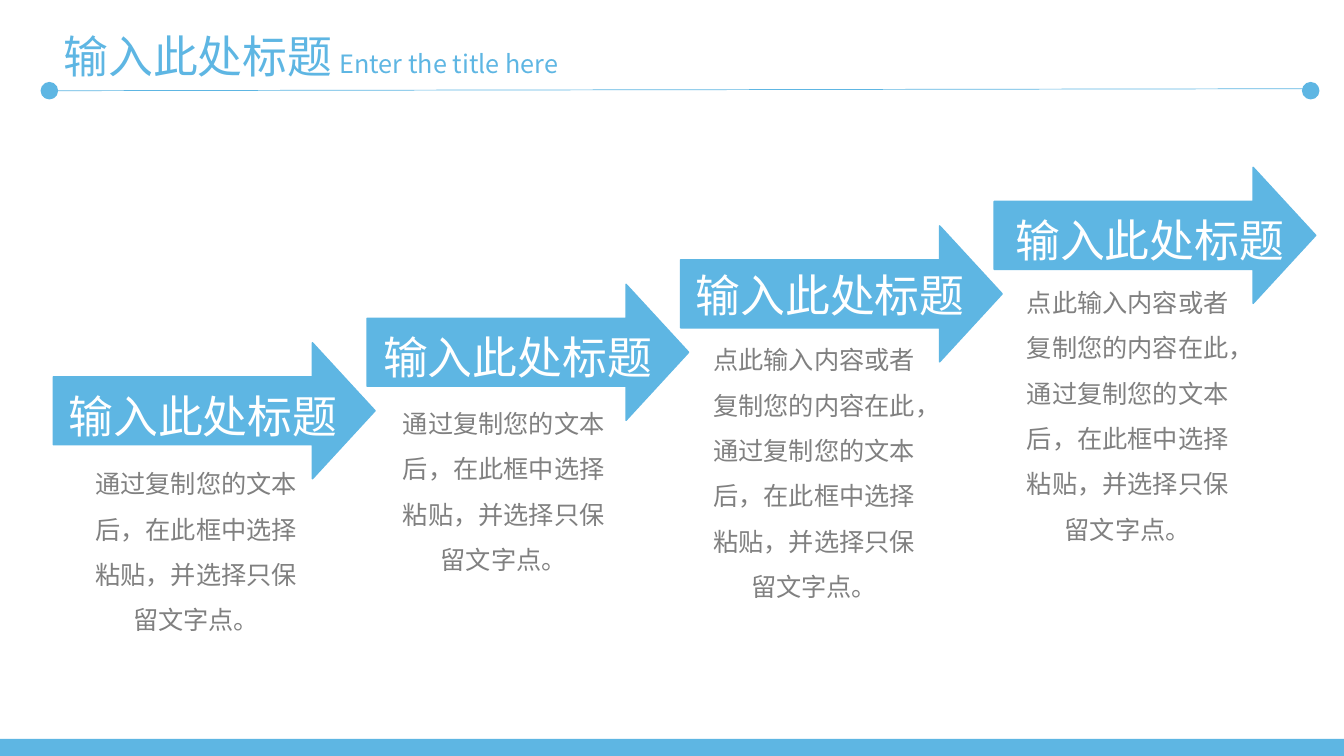
import pptx
import pptx.dml.color
import pptx.enum.shapes
import pptx.enum.text
import pptx.oxml
import pptx.oxml.ns
import pptx.util

Inches, Pt = pptx.util.Inches, pptx.util.Pt
SHAPE = pptx.enum.shapes.MSO_SHAPE
ALIGN = pptx.enum.text.PP_ALIGN
BLUE, GREY, WHITE = "5EB6E3", "808080", "FFFFFF"
FONT = "Noto Sans CJK SC"

TITLE = "输入此处标题"
SUB = "Enter the title here"
SHORT = "通过复制您的文本后，在此框中选择粘贴，并选择只保留文字点。"
LONG = "点此输入内容或者复制您的内容在此，" + SHORT
# label, label place, body, body place, body height
STEPS = [
    (TITLE, (0.45, 3.81), SHORT, (0.8, 4.45), 1.92),
    (TITLE, (3.57, 3.22), SHORT, (3.85, 3.85), 1.92),
    (TITLE, (6.67, 2.61), LONG, (6.93, 3.22), 2.83),
    (TITLE, (9.84, 2.06), LONG, (10.04, 2.65), 2.83),
]
LEFT, TOP = 0.53, 3.4
STEP_X, STEP_Y = 3.11, -0.58


def paint(color, hue):
    color.rgb = pptx.dml.color.RGBColor.from_string(hue)


def flatten(line):
    """Take the theme shadow off a connector."""
    line._element.spPr.append(pptx.oxml.parse_xml(
        "<a:effectLst %s/>" % pptx.oxml.ns.nsdecls("a")))


def add_part(kind, x, y, w, h, edge=True):
    part = slide.shapes.add_shape(kind, Inches(x), Inches(y), Inches(w), Inches(h))
    part.shadow.inherit = False
    part.fill.solid()
    paint(part.fill.fore_color, BLUE)
    if edge:
        paint(part.line.color, BLUE)
        part.line.width = Pt(1)
    else:
        part.line.fill.background()
    return part


def write(box, text, size, hue, align=ALIGN.LEFT, space=None):
    frame = box.text_frame
    frame.word_wrap = True
    frame.auto_size = pptx.enum.text.MSO_AUTO_SIZE.SHAPE_TO_FIT_TEXT
    frame.vertical_anchor = pptx.enum.text.MSO_ANCHOR.TOP
    para = frame.paragraphs[0]
    para.alignment = align
    para.line_spacing = space
    run = para.add_run()
    run.text = text
    run.font.size = Pt(size)
    run.font.name = FONT
    paint(run.font.color, hue)
    # East Asian letters take their font from a:ea
    run.font._element.append(pptx.oxml.parse_xml(
        '<a:ea %s typeface="%s"/>' % (pptx.oxml.ns.nsdecls("a"), FONT)))


def add_text(x, y, w, h, *style):
    box = slide.shapes.add_textbox(Inches(x), Inches(y), Inches(w), Inches(h))
    write(box, *style)


deck = pptx.Presentation()
deck.slide_width, deck.slide_height = Inches(13.33), Inches(7.5)
slide = deck.slides.add_slide(deck.slide_layouts[5])

head = slide.shapes.title
head.left, head.top = Inches(0.53), Inches(0.23)
head.width, head.height = Inches(3.05), Inches(0.64)
write(head, TITLE, 32, BLUE, ALIGN.LEFT, 1.0)
add_text(3.27, 0.43, 2.58, 0.4, SUB, 18, BLUE)

rule = slide.shapes.add_connector(
    pptx.enum.shapes.MSO_CONNECTOR.STRAIGHT,
    Inches(13.08), Inches(0.88), Inches(0.53), Inches(0.9))
paint(rule.line.color, BLUE)
rule.line.width = Pt(0.5)
flatten(rule)
for x in (0.41, 12.92):
    add_part(SHAPE.OVAL, x, 0.82, 0.16, 0.16)
add_part(SHAPE.RECTANGLE, 0, 7.33, 13.33, 0.19, edge=False)

for i, (label, spot, body, place, tall) in enumerate(STEPS):
    add_text(*place, 2.29, tall, body, 18, GREY, ALIGN.CENTER, 1.5)
    arrow = add_part(SHAPE.RIGHT_ARROW, LEFT + i * STEP_X, TOP + i * STEP_Y, 3.19, 1.35)
    arrow.adjustments[1] = 0.46
    add_text(*spot, 3.13, 0.64, label, 32, WHITE, ALIGN.CENTER)

deck.save("out.pptx")
